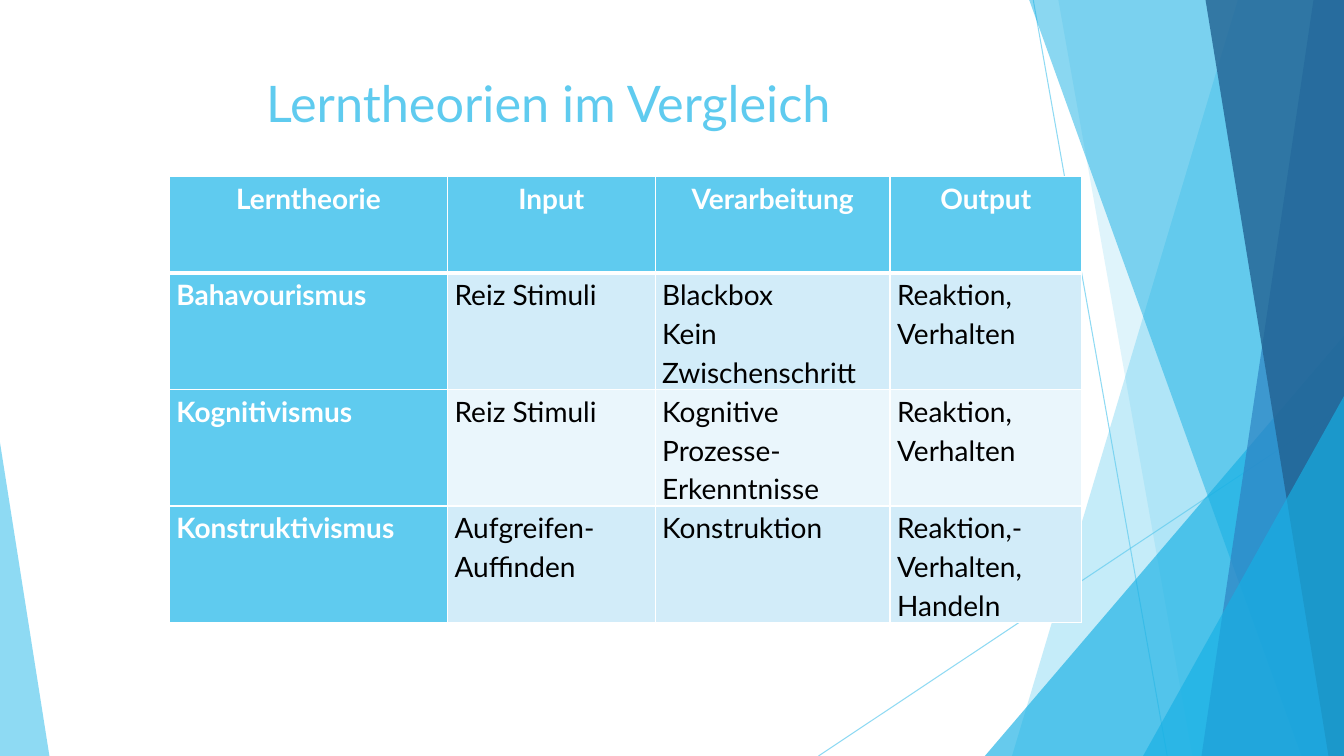
from dataclasses import dataclass

from lxml import etree
from pptx import Presentation
from pptx.dml.color import RGBColor
from pptx.enum.shapes import MSO_CONNECTOR, MSO_SHAPE
from pptx.enum.text import MSO_ANCHOR, PP_ALIGN
from pptx.oxml.ns import qn
from pptx.util import Inches, Pt

STRAIGHT = MSO_CONNECTOR.STRAIGHT
TRIANGLE = MSO_SHAPE.ISOSCELES_TRIANGLE
TOP = MSO_ANCHOR.TOP
CENTER, LEFT = PP_ALIGN.CENTER, PP_ALIGN.LEFT
TITLE_ONLY = 5


@dataclass(frozen=True)
class Theme:
    """Colours, font and type sizes of the deck."""
    sky: str = "5FCBEF"
    azure: str = "17B0E4"
    blue: str = "2E83C3"
    navy: str = "226292"
    band_dark: str = "D2ECF9"
    band_light: str = "EAF6FC"
    white: str = "FFFFFF"
    black: str = "000000"
    font: str = "Lato"
    title_size: float = 36
    table_size: float = 20
    hairline: float = 0.75
    border: float = 1
    header_border: float = 3


class SlideBuilder:
    """Draws on one slide, with lengths in percent of its width and height."""

    def __init__(self, deck, theme):
        """Add a title-only slide to the deck."""
        self.deck = deck
        self.theme = theme
        self.slide = deck.slides.add_slide(deck.slide_layouts[TITLE_ONLY])
        self.shapes = self.slide.shapes

    def x(self, share):
        """Turn a percentage of the width into a length."""
        return round(self.deck.slide_width * share / 100)

    def y(self, share):
        """Turn a percentage of the height into a length."""
        return round(self.deck.slide_height * share / 100)

    def fade(self, shape, opacity):
        """Make the explicit colour of a shape translucent."""
        for color in shape.element.spPr.iter(qn("a:srgbClr")):
            etree.SubElement(color, qn("a:alpha"), val=str(opacity * 1000))

    def paint(self, shape, color, opacity):
        """Give a shape a translucent fill without outline or shadow."""
        shape.shadow.inherit = False
        shape.fill.solid()
        shape.fill.fore_color.rgb = RGBColor.from_string(color)
        shape.line.fill.background()
        self.fade(shape, opacity)

    def style(self, paragraph, size, color, bold, alignment):
        """Format a whole paragraph."""
        paragraph.alignment = alignment
        paragraph.font.name = self.theme.font
        paragraph.font.size = Pt(size)
        paragraph.font.bold = bold
        paragraph.font.color.rgb = RGBColor.from_string(color)

    def line(self, start, end):
        """Draw a translucent hairline."""
        line = self.shapes.add_connector(
            STRAIGHT, self.x(start[0]), self.y(start[1]), self.x(end[0]), self.y(end[1]))
        line.line.width = Pt(self.theme.hairline)
        line.line.color.rgb = RGBColor.from_string(self.theme.sky)
        self.fade(line, 70)
        etree.SubElement(line.element.spPr, qn("a:effectLst"))

    def band(self, top, bottom, color, opacity):
        """Fill from a slanted left edge to the right edge of the slide."""
        outline = self.shapes.build_freeform(self.x(top), 0)
        outline.add_line_segments([
            (self.x(100), 0), (self.x(100), self.y(100)), (self.x(bottom), self.y(100))])
        self.paint(outline.convert_to_shape(), color, opacity)

    def corner(self, left, top, right, apex, color, opacity):
        """Draw a right triangle that stands on the bottom edge."""
        triangle = self.shapes.add_shape(
            TRIANGLE, self.x(left), self.y(top), self.x(right - left), self.y(100 - top))
        triangle.adjustments[0] = apex
        self.paint(triangle, color, opacity)

    def title(self, text, left, top, width, height):
        """Place and format the title placeholder."""
        title = self.shapes.title
        title.left, title.top = self.x(left), self.y(top)
        title.width, title.height = self.x(width), self.y(height)
        frame = title.text_frame
        frame.text = text
        frame.word_wrap = True
        frame.vertical_anchor = TOP
        self.style(frame.paragraphs[0], self.theme.title_size, self.theme.sky, False, CENTER)

    def border(self, cell, side, width):
        """Draw one white border of a cell."""
        edge = etree.SubElement(
            cell._tc.get_or_add_tcPr(), qn(f"a:ln{side}"), w=str(Pt(width)))
        fill = etree.SubElement(edge, qn("a:solidFill"))
        etree.SubElement(fill, qn("a:srgbClr"), val=self.theme.white)

    def cell(self, cell, text, row, column):
        """Fill and format one cell by its place in the table."""
        theme = self.theme
        heading = row == 0 or column == 0
        cell.text = text
        cell.margin_left = cell.margin_right = Inches(0.07)
        cell.margin_top = cell.margin_bottom = 0
        cell.vertical_anchor = TOP
        for paragraph in cell.text_frame.paragraphs:
            self.style(paragraph, theme.table_size, theme.white if heading else theme.black,
                       heading, CENTER if row == 0 else LEFT)
            paragraph.line_spacing = 1.15
        thick_side = {0: "B", 1: "T"}.get(row)
        for side in "LRTB":
            self.border(cell, side, theme.header_border if side == thick_side else theme.border)
        band = theme.band_dark if row % 2 else theme.band_light
        cell.fill.solid()
        cell.fill.fore_color.rgb = RGBColor.from_string(theme.sky if heading else band)

    def table(self, rows, left, top, widths, heights):
        """Add a table with a heading row and a heading column."""
        table = self.shapes.add_table(
            len(rows), len(widths), self.x(left), self.y(top),
            self.x(sum(widths)), self.y(sum(heights))).table
        table.first_col = True
        for column, width in zip(table.columns, widths):
            column.width = self.x(width)
        for row, height in zip(table.rows, heights):
            row.height = self.y(height)
        for row, texts in enumerate(rows):
            for column, text in enumerate(texts):
                self.cell(table.cell(row, column), text, row, column)


THEORIES = [
    ("Lerntheorie", "Input", "Verarbeitung", "Output"),
    ("Bahavourismus", "Reiz Stimuli", "Blackbox\nKein Zwischenschritt", "Reaktion, Verhalten"),
    ("Kognitivismus", "Reiz Stimuli", "Kognitive Prozesse-Erkenntnisse", "Reaktion, Verhalten"),
    ("Konstruktivismus", "Aufgreifen-Auffinden", "Konstruktion",
     "Reaktion,-Verhalten, Handeln"),
]


def main():
    """Build and save the deck."""
    deck = Presentation()
    deck.slide_width, deck.slide_height = Inches(13.333), Inches(7.5)
    theme = Theme()
    page = SlideBuilder(deck, theme)
    page.line((76.88, 0), (86.85, 100))
    page.line((100, 53.73), (60.9, 100))
    page.band(92.1, 75.3, theme.sky, 36)
    page.band(78.75, 88.73, theme.sky, 20)
    page.corner(73.28, 44.4, 100, 1, theme.azure, 66)
    page.band(76.58, 96.83, theme.azure, 50)
    page.band(97.73, 89.4, theme.blue, 70)
    page.band(89.7, 98.85, theme.navy, 80)
    page.corner(85.05, 52.4, 100, 1, theme.azure, 66)
    page.corner(0, 58.53, 3.68, 0, theme.sky, 70)
    page.title("Lerntheorien im Vergleich", 5.55, 8.93, 70.5, 19.2)
    page.table(THEORIES, 12.6, 23.33, [20.7, 15.45, 17.48, 14.25], [12.8] + [15.38] * 3)
    deck.save("out.pptx")


if __name__ == "__main__":
    main()
